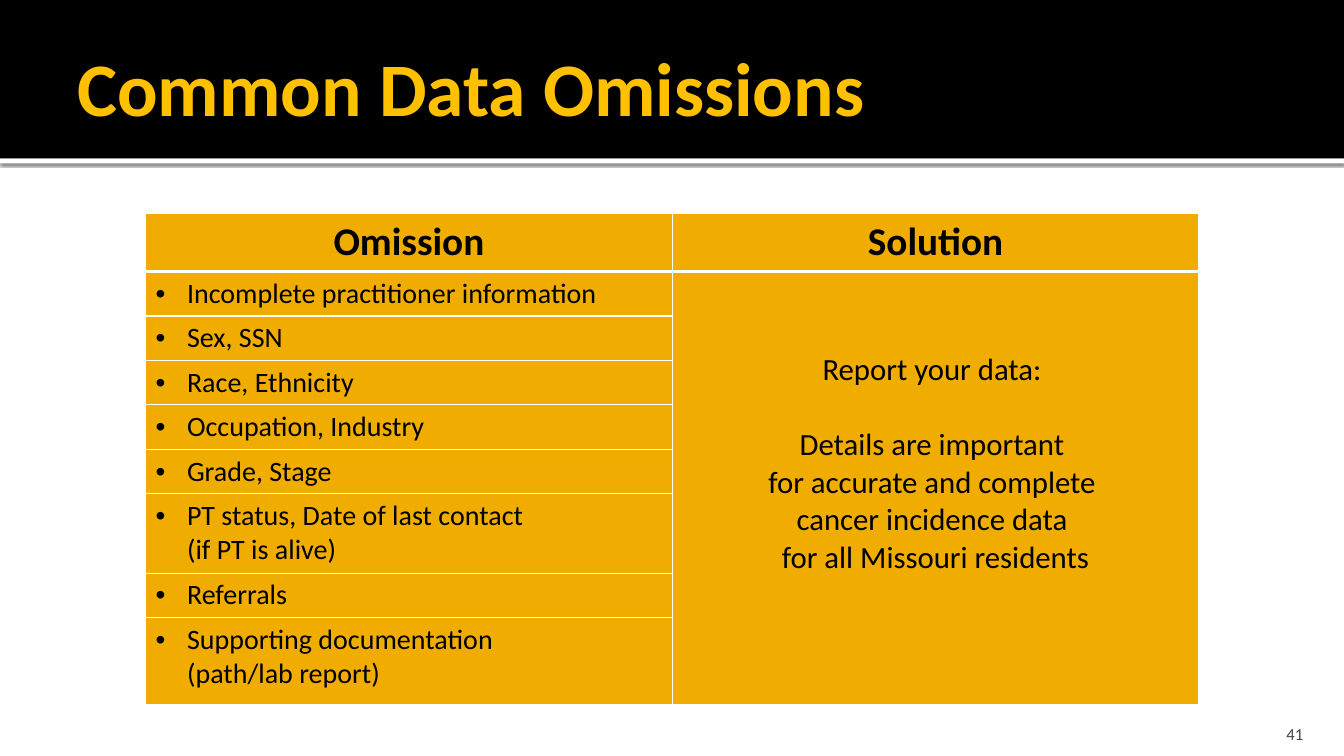
import lxml.etree
import pptx
import pptx.dml.color
import pptx.enum.shapes
import pptx.enum.text
import pptx.oxml
import pptx.oxml.ns
import pptx.util

Cm = pptx.util.Cm
Pt = pptx.util.Pt
RGBColor = pptx.dml.color.RGBColor
ALIGN = pptx.enum.text.PP_ALIGN
ANCHOR = pptx.enum.text.MSO_ANCHOR
qn = pptx.oxml.ns.qn

BLACK = RGBColor(0x00, 0x00, 0x00)
WHITE = RGBColor(0xFF, 0xFF, 0xFF)
GOLD = RGBColor(0xFF, 0xC0, 0x00)
AMBER = RGBColor(0xF0, 0xAD, 0x00)
GREY = RGBColor(0x45, 0x45, 0x45)

NS = pptx.oxml.ns.nsdecls("a")
SHADOW = (f'<a:effectLst {NS}><a:outerShdw blurRad="31750" dist="10160" dir="5400000">'
          '<a:srgbClr val="000000"><a:alpha val="60000"/></a:srgbClr>'
          '</a:outerShdw></a:effectLst>')

OMISSIONS = [
    "Incomplete practitioner information",
    "Sex, SSN",
    "Race, Ethnicity",
    "Occupation, Industry",
    "Grade, Stage",
    "PT status, Date of last contact\v(if PT is alive)",
    "Referrals",
    "Supporting documentation\v(path/lab report)",
]
SOLUTION = [
    "Report your data: ",
    "Details are important ",
    "for accurate and complete ",
    "cancer incidence data ",
    "for all Missouri residents",
]
ROW_HEIGHTS = [1.46] + [1.12] * 5 + [2.0, 1.12, 2.19]


class SlideBuilder:
    font = "Calibri"

    def __init__(self, prs):
        self.s = prs.slides.add_slide(prs.slide_layouts[5])

    def apply(self, target, values):
        for name, value in values.items():
            setattr(target, name, value)

    def fill_text(self, tf, lines, size, color=BLACK, bold=False, align=ALIGN.LEFT):
        for i, line in enumerate(lines):
            p = tf.paragraphs[0] if i == 0 else tf.add_paragraph()
            p.text = line
            p.alignment = align
            for r in p.runs:
                self.apply(r.font, {"name": self.font, "size": Pt(size), "bold": bold})
                r.font.color.rgb = color

    def frame(self, tf, anchor, left, top, right, bottom):
        self.apply(tf, {
            "word_wrap": True, "auto_size": pptx.enum.text.MSO_AUTO_SIZE.NONE,
            "vertical_anchor": anchor, "margin_left": Cm(left), "margin_top": Cm(top),
            "margin_right": Cm(right), "margin_bottom": Cm(bottom)})

    def bar(self, top, height, color, shadow=False):
        sp = self.s.shapes.add_shape(pptx.enum.shapes.MSO_SHAPE.RECTANGLE,
                                     0, Cm(top), Cm(33.87), Cm(height))
        sp.fill.solid()
        sp.fill.fore_color.rgb = color
        sp.line.fill.background()
        if shadow:
            sp._element.spPr.append(pptx.oxml.parse_xml(SHADOW))
        else:
            sp.shadow.inherit = False

    def title(self, text):
        sp = self.s.shapes.title
        self.apply(sp, {"left": Cm(1.7), "top": Cm(0.43),
                        "width": Cm(30.48), "height": Cm(3.48)})
        self.frame(sp.text_frame, ANCHOR.MIDDLE, 0.25, 0.13, 0.13, 0.13)
        self.fill_text(sp.text_frame, [text], 54, GOLD, True)
        sp._element.getparent().append(sp._element)

    def page_number(self, text):
        sp = self.s.shapes.add_textbox(Cm(30.38), Cm(17.98), Cm(2.72), Cm(0.76))
        self.frame(sp.text_frame, ANCHOR.BOTTOM, 0.25, 0.13, 0.25, 0)
        self.fill_text(sp.text_frame, [text], 12, GREY, align=ALIGN.RIGHT)

    def bullet(self, p):
        pPr = p._p.get_or_add_pPr()
        pPr.set("marL", str(Cm(0.79)))
        pPr.set("indent", str(-Cm(0.79)))
        lxml.etree.SubElement(pPr, qn("a:buFont"), typeface="Arial")
        lxml.etree.SubElement(pPr, qn("a:buChar"), char="•")

    def style_cell(self, cell, row):
        cell.fill.solid()
        cell.fill.fore_color.rgb = AMBER
        widths = {"lnL": 1, "lnR": 1, "lnT": 3 if row == 1 else 1, "lnB": 3 if row == 0 else 1}
        tcPr = cell._tc.get_or_add_tcPr()
        for i, (side, width) in enumerate(widths.items()):
            tcPr.insert(i, pptx.oxml.parse_xml(
                f'<a:{side} {NS} w="{Pt(width)}"><a:solidFill>'
                f'<a:srgbClr val="{WHITE}"/></a:solidFill></a:{side}>'))

    def omission_table(self, headers, omissions, solution):
        table = self.s.shapes.add_table(len(ROW_HEIGHTS), 2, Cm(3.67), Cm(5.38),
                                        Cm(26.54), Cm(sum(ROW_HEIGHTS))).table
        for i, height in enumerate(ROW_HEIGHTS):
            table.rows[i].height = Cm(height)
            for cell in table.rows[i].cells:
                self.style_cell(cell, i)
        for cell, text in zip(table.rows[0].cells, headers):
            self.fill_text(cell.text_frame, [text], 28, bold=True, align=ALIGN.CENTER)
        for i, text in enumerate(omissions, 1):
            tf = table.cell(i, 0).text_frame
            self.fill_text(tf, [text], 20)
            self.bullet(tf.paragraphs[0])
        cell = table.cell(1, 1)
        cell.merge(table.cell(len(omissions), 1))
        cell.margin_top = Cm(2.02)
        self.fill_text(cell.text_frame, solution, 22, align=ALIGN.CENTER)
        cell.text_frame.paragraphs[1].space_before = Pt(26.8)


def main():
    prs = pptx.Presentation()
    prs.slide_width, prs.slide_height = Cm(33.87), Cm(19.05)
    slide = SlideBuilder(prs)
    slide.bar(3.99, 0.13, WHITE, shadow=True)
    slide.bar(0, 3.99, BLACK)
    slide.title("Common Data Omissions")
    slide.omission_table(["Omission", "Solution"], OMISSIONS, SOLUTION)
    slide.page_number("41")
    prs.save("out.pptx")


if __name__ == "__main__":
    main()
